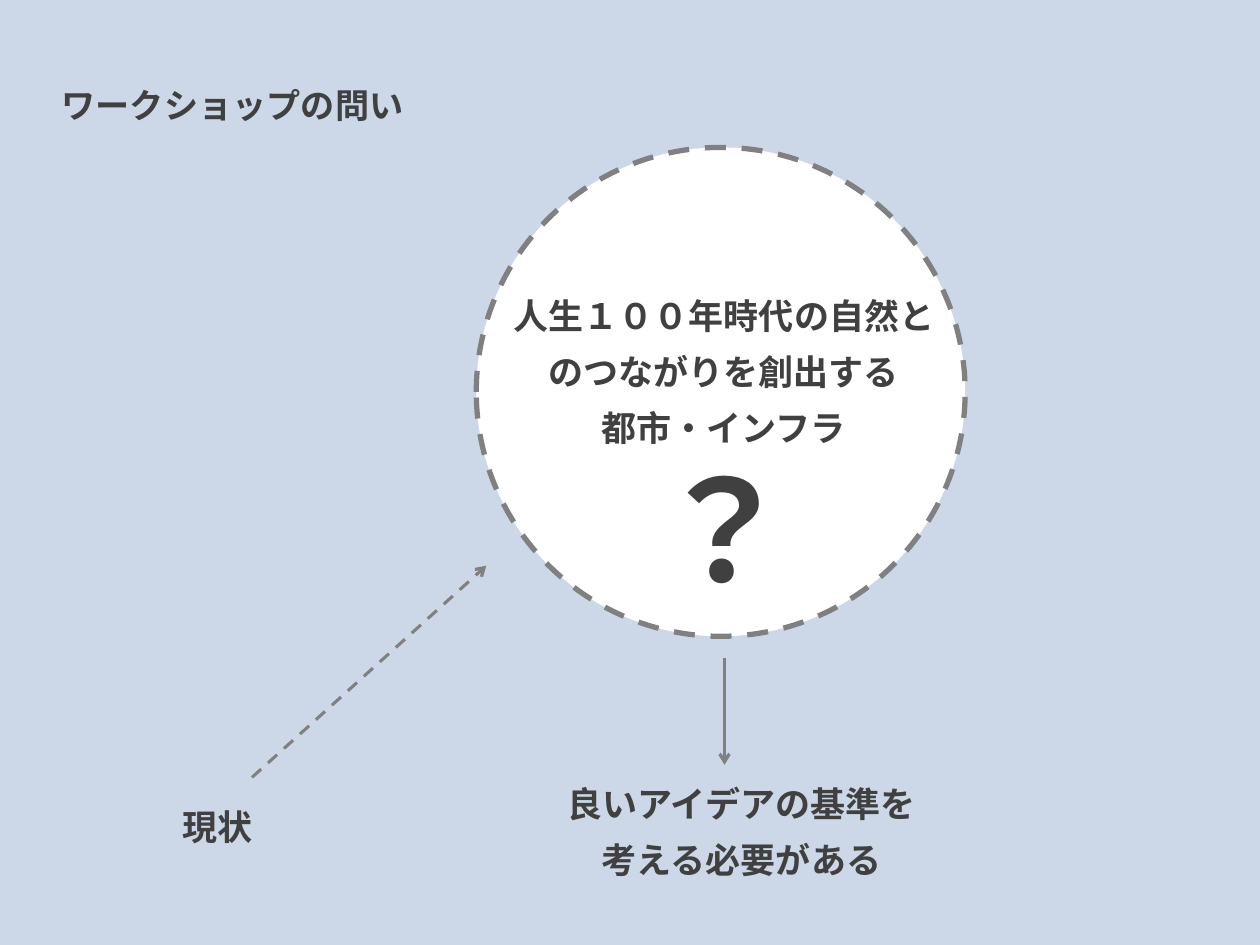
from dataclasses import dataclass

from lxml.etree import SubElement
from pptx import Presentation
from pptx.dml.color import RGBColor
from pptx.enum.dml import MSO_LINE_DASH_STYLE as Dash
from pptx.enum.shapes import MSO_CONNECTOR as Connector, MSO_SHAPE as Shape
from pptx.enum.text import MSO_ANCHOR as Anchor, PP_ALIGN as Align
from pptx.oxml.ns import qn
from pptx.util import Inches, Pt


@dataclass(frozen=True)
class Theme:
    background: RGBColor = RGBColor(0xCC, 0xD8, 0xE7)
    circle: RGBColor = RGBColor(0xFF, 0xFF, 0xFF)
    line: RGBColor = RGBColor(0x80, 0x80, 0x80)
    text: RGBColor = RGBColor(0x40, 0x40, 0x40)
    font: str = "Noto Sans CJK JP"
    heading_size: float = 19.5
    body_size: float = 20
    mark_size: float = 80
    leading: Pt = Pt(32)
    outline_width: float = 3
    arrow_width: float = 1.75


def write_text(frame, text, *, theme, size, align=Align.LEFT, spacing=None, before=None):
    """Fill a frame; newlines start paragraphs and vertical tabs break lines."""
    for index, content in enumerate(text.split("\n")):
        paragraph = frame.add_paragraph() if index else frame.paragraphs[0]
        paragraph.text = content
        paragraph.alignment = align
        paragraph.line_spacing = spacing
        paragraph.space_before = before
        for run in paragraph.runs:
            font = run.font
            font.size = Pt(size)
            font.bold = True
            font.color.rgb = theme.text
            font.name = theme.font
            SubElement(font._element, qn("a:ea"), typeface=theme.font)


class SlideBuilder:
    def __init__(self, slide, theme):
        self.slide = slide
        self.theme = theme
        fill = slide.background.fill
        fill.solid()
        fill.fore_color.rgb = theme.background

    def style_line(self, line, width, dash=None):
        line.color.rgb = self.theme.line
        line.width = Pt(width)
        if dash:
            line.dash_style = dash

    def circle(self, left, top, diameter):
        shape = self.slide.shapes.add_shape(
            Shape.OVAL, Inches(left), Inches(top), Inches(diameter), Inches(diameter))
        shape.shadow.inherit = False
        shape.fill.solid()
        shape.fill.fore_color.rgb = self.theme.circle
        self.style_line(shape.line, self.theme.outline_width, Dash.DASH)

    def text(self, box, text, *, size=None, anchor=Anchor.MIDDLE, **text_format):
        frame = self.slide.shapes.add_textbox(*map(Inches, box)).text_frame
        frame.word_wrap = True
        frame.vertical_anchor = anchor
        write_text(frame, text, theme=self.theme,
                   size=size or self.theme.body_size, **text_format)

    def arrow(self, start, end, dash=None):
        connector = self.slide.shapes.add_connector(
            Connector.STRAIGHT, *map(Inches, start + end))
        self.style_line(connector.line, self.theme.arrow_width, dash)
        properties = connector._element.spPr
        SubElement(properties.find(qn("a:ln")), qn("a:tailEnd"), type="arrow")
        SubElement(properties, qn("a:effectLst"))


def main():
    presentation = Presentation()
    presentation.slide_width = Inches(10)
    presentation.slide_height = Inches(7.5)
    theme = Theme()
    builder = SlideBuilder(
        presentation.slides.add_slide(presentation.slide_layouts[6]), theme)
    centered = {"align": Align.CENTER, "spacing": theme.leading}

    builder.circle(3.78, 1.17, 3.88)
    builder.text((0.39, 0.43, 6.95, 0.74), "ワークショップの問い",
                 size=theme.heading_size, spacing=1.2)
    builder.text((3.86, 2.09, 3.77, 1.61),
                 "人生１００年時代の自然とのつながりを創出する\v都市・インフラ", **centered)
    builder.text((5.09, 3.76, 1.01, 1.72), "？",
                 size=theme.mark_size, spacing=theme.leading)
    builder.text((1.35, 6.38, 0.79, 0.33), "現状",
                 anchor=Anchor.TOP, spacing=0.9, before=Pt(10))
    builder.text((4, 5.74, 3.77, 1.61),
                 "良いアイデアの基準を\n考える必要がある", **centered)
    builder.arrow((2, 6.17), (3.86, 4.49), Dash.DASH)
    builder.arrow((5.75, 5.22), (5.75, 6.07))

    presentation.save("out.pptx")


if __name__ == "__main__":
    main()
